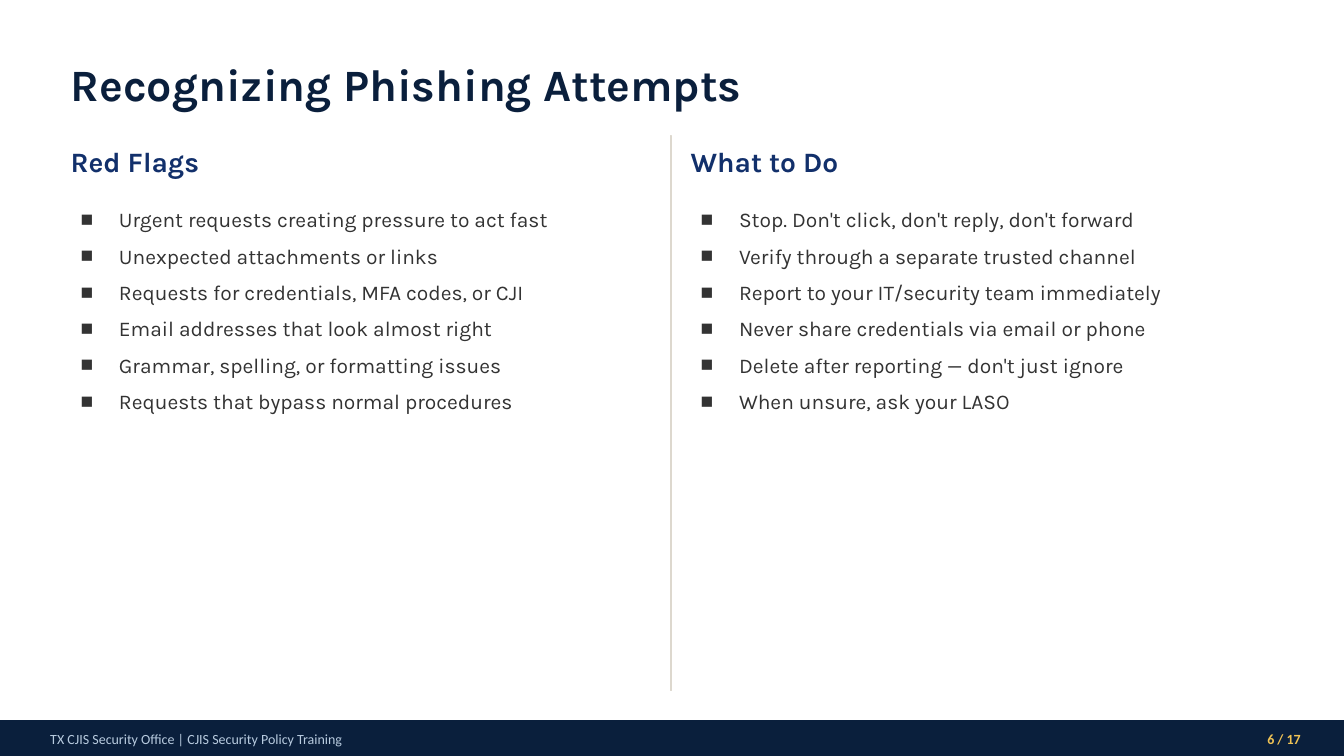
from lxml.etree import SubElement
from pptx import Presentation
from pptx.dml.color import RGBColor
from pptx.enum.shapes import MSO_SHAPE
from pptx.enum.text import MSO_ANCHOR, MSO_AUTO_SIZE, PP_ALIGN
from pptx.oxml.ns import qn
from pptx.util import Pt

PX = 9144
COLORS = {
    "white": "FFFFFF",
    "navy": "0A1F3C",
    "heading": "12306B",
    "body": "333333",
    "divider": "DDD8CE",
    "footer": "B8CBDF",
    "gold": "F0C355",
}
COLUMNS = [
    ("Red Flags", [
        "Urgent requests creating pressure to act fast",
        "Unexpected attachments or links",
        "Requests for credentials, MFA codes, or CJI",
        "Email addresses that look almost right",
        "Grammar, spelling, or formatting issues",
        "Requests that bypass normal procedures",
    ]),
    ("What to Do", [
        "Stop. Don't click, don't reply, don't forward",
        "Verify through a separate trusted channel",
        "Report to your IT/security team immediately",
        "Never share credentials via email or phone",
        "Delete after reporting — don't just ignore",
        "When unsure, ask your LASO",
    ]),
]


def color(name):
    return RGBColor.from_string(COLORS[name])


def place(shape, left, top, width, height):
    shape.left, shape.top = left * PX, top * PX
    shape.width, shape.height = width * PX, height * PX


def set_bullet(para, symbol, indent):
    properties = para._p.get_or_add_pPr()
    properties.set("marL", str(indent * PX))
    properties.set("indent", str(-indent * PX))
    if symbol:
        SubElement(properties, qn("a:buChar")).set("char", symbol)
    else:
        SubElement(properties, qn("a:buNone"))


def write(shape, lines, *, size, fill, font="Karla", bold=False, align=PP_ALIGN.LEFT,
          anchor=MSO_ANCHOR.MIDDLE, inset=(0, 0), bullet=None, indent=0, after=0):
    frame = shape.text_frame
    frame.word_wrap = True
    frame.auto_size = MSO_AUTO_SIZE.NONE
    frame.vertical_anchor = anchor
    frame.margin_left = frame.margin_right = inset[0] * PX
    frame.margin_top = frame.margin_bottom = inset[1] * PX
    for index, line in enumerate(lines):
        para = frame.add_paragraph() if index else frame.paragraphs[0]
        set_bullet(para, bullet, indent)
        para.alignment = align
        para.space_before = Pt(0)
        para.space_after = Pt(after)
        span = para.add_run()
        span.text = line
        span.font.name = font
        span.font.size = Pt(size)
        span.font.bold = bold
        span.font.color.rgb = color(fill)


def add_bar(page, left, top, width, height, fill):
    bar = page.shapes.add_shape(MSO_SHAPE.RECTANGLE, 0, 0, 0, 0)
    place(bar, left, top, width, height)
    bar.shadow.inherit = False
    bar.fill.solid()
    bar.fill.fore_color.rgb = color(fill)
    bar.line.color.rgb = color(fill)
    bar.line.width = Pt(1)


def add_title(page, text, left, top, width, height):
    title = page.shapes.title
    place(title, left, top, width, height)
    write(title, [text], size=32, fill="navy", bold=True)


def add_column(heading_box, list_box, heading, items, left, top, width, height):
    place(heading_box, left, top, width, 50)
    write(heading_box, [heading], size=20, fill="heading", bold=True)
    place(list_box, left, top + 65, width, height - 65)
    write(list_box, items, size=15, fill="body", anchor=MSO_ANCHOR.TOP,
          inset=(10, 5), bullet="■", indent=38, after=8)


def add_footer(page, left, top, width, height):
    add_bar(page, left, top, width, height, "navy")
    label = page.shapes.add_textbox(0, 0, 0, 0)
    place(label, left + 40, top + 3, 900, 30)
    write(label, ["TX CJIS Security Office | CJIS Security Policy Training"],
          size=10, fill="footer", font="Calibri", inset=(10, 5))
    number = page.shapes.add_textbox(0, 0, 0, 0)
    place(number, left + width - 153, top + 3, 120, 30)
    write(number, ["6 / 17"], size=10, fill="gold", font="Calibri", bold=True,
          align=PP_ALIGN.RIGHT, inset=(10, 5))


def add_comparison_slide(deck, title, columns):
    page = deck.slides.add_slide(deck.slide_layouts.get_by_name("Comparison"))
    page.background.fill.solid()
    page.background.fill.fore_color.rgb = color("white")
    add_title(page, title, 70, 45, 1200, 75)
    add_footer(page, 0, 715, 1333, 35)
    add_bar(page, 665, 135, 1, 550, "divider")
    boxes = list(page.placeholders)[1:]
    for index, (heading, items) in enumerate(columns):
        heading_box, list_box = boxes[2 * index:2 * index + 2]
        add_column(heading_box, list_box, heading, items, 70 + 615 * index, 135, 580, 545)


def main():
    deck = Presentation()
    deck.slide_width, deck.slide_height = 1333 * PX, 750 * PX
    add_comparison_slide(deck, "Recognizing Phishing Attempts", COLUMNS)
    deck.save("out.pptx")


if __name__ == "__main__":
    main()
